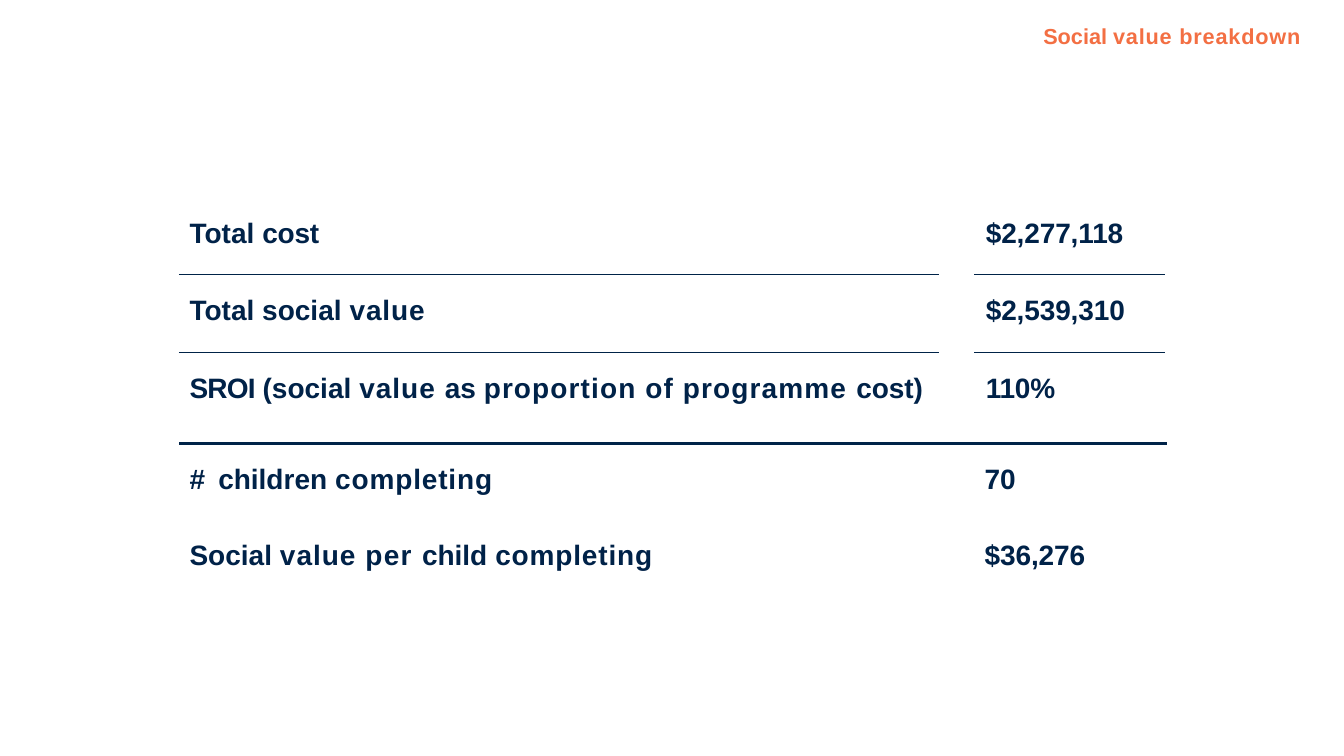
import pptx
import pptx.dml.color
import pptx.enum.text
import pptx.util
from dataclasses import dataclass
from lxml import etree
from pptx.oxml import ns

Pt = pptx.util.Pt
RGB = pptx.dml.color.RGBColor


@dataclass(frozen=True)
class Theme:
    font: str = "Arial"
    ink: RGB = RGB(0x00, 0x22, 0x48)
    rule: RGB = RGB(0x00, 0x23, 0x48)
    accent: RGB = RGB(0xF3, 0x6F, 0x43)
    heading_size: float = 15.5
    figure_size: float = 20


theme = Theme()


def write_runs(frame, pieces, size, color, left, top):
    frame.margin_left, frame.margin_top = Pt(left), Pt(top)
    frame.margin_right = frame.margin_bottom = 0
    frame.vertical_anchor = pptx.enum.text.MSO_ANCHOR.TOP if hasattr(frame, "vertical_anchor") else None
    paragraph = frame.paragraphs[0] if hasattr(frame, "paragraphs") else frame.text_frame.paragraphs[0]
    paragraph.alignment = pptx.enum.text.PP_ALIGN.LEFT
    for wording, spacing in pieces:
        run = paragraph.add_run()
        run.text = wording
        run.font.name, run.font.size, run.font.bold = theme.font, Pt(size), True
        run.font.color.rgb = color
        run.font._element.set("spc", str(round(spacing * 100)))


def rule_cell(cell, sides):
    properties = cell._tc.get_or_add_tcPr()
    for side in sides:
        border = etree.SubElement(properties, ns.qn(f"a:ln{side}"), w=str(Pt(1)))
        solid = etree.SubElement(border, ns.qn("a:solidFill"))
        etree.SubElement(solid, ns.qn("a:srgbClr"), val=str(theme.rule))


deck = pptx.Presentation()
deck.slide_width, deck.slide_height = Pt(960), Pt(540)
slide = deck.slides.add_slide(deck.slide_layouts[5])

heading = slide.shapes.title
heading.left, heading.top, heading.width, heading.height = Pt(744.5), Pt(15.1), Pt(189.4), Pt(20.9)
heading.text_frame.word_wrap = True
heading.text_frame.auto_size = pptx.enum.text.MSO_AUTO_SIZE.NONE
write_runs(heading.text_frame, [("Social ", 0), ("value breakdown", 0.6)],
           theme.heading_size, theme.accent, 0.7, 1.4)

returns = [
    ([("Total ", 0), ("cost", -0.2)], [("$2,277,118", -0.1)]),
    ([("Total social ", 0), ("value", 0.6)], [("$2,539,310", -0.1)]),
    ([("SROI ", -0.6), ("(social ", 0), ("value ", 0.7), ("as ", 0),
      ("proportion of programme ", 0.8), ("cost)", -0.1)], [("110%", -0.2)]),
]
per_child = [
    ([("# ", 1.9), ("children ", 0), ("completing", 0.6)], [("70", -0.2)]),
    ([("Social ", 0), ("value ", 0.7), ("per ", 0.9), ("child ", 0), ("completing", 0.6)],
     [("$36,276", -0.1)]),
]
sections = [
    (returns, 128.2, 154.1, [542.9, 25.2, 135.4], [41.8, 56.2, 40.3],
     [7.2, 7.9], [1.4, 15.1, 14.4], ["B", "TB", "T"]),
    (per_child, 133.2, 329.8, [450.7, 195.8], [41, 41], [2.2, 119.5], [1.4, 15.1], ["", ""]),
]
for entries, left, top, widths, heights, indents, insets, borders in sections:
    table = slide.shapes.add_table(len(heights), len(widths), Pt(left), Pt(top),
                                   Pt(sum(widths)), Pt(sum(heights))).table
    table.first_row = table.horz_banding = False
    for column, width in zip(table.columns, widths):
        column.width = Pt(width)
    for row, height, entry, inset, sides in zip(table.rows, heights, entries, insets, borders):
        row.height = Pt(height)
        label, *gap, amount = row.cells
        for cell, pieces, indent in zip((label, amount), entry, indents):
            write_runs(cell, pieces, theme.figure_size, theme.ink, indent, inset)
            rule_cell(cell, sides)
        for cell in row.cells:
            cell.fill.background()

divider = slide.shapes.add_connector(pptx.enum.shapes.MSO_CONNECTOR.STRAIGHT,
                                     Pt(128.2), Pt(316.8), Pt(833.8), Pt(316.8))
divider.line.color.rgb = theme.rule
divider.line.width = Pt(2.25)
etree.SubElement(divider._element.spPr, ns.qn("a:effectLst"))

deck.save("out.pptx")
